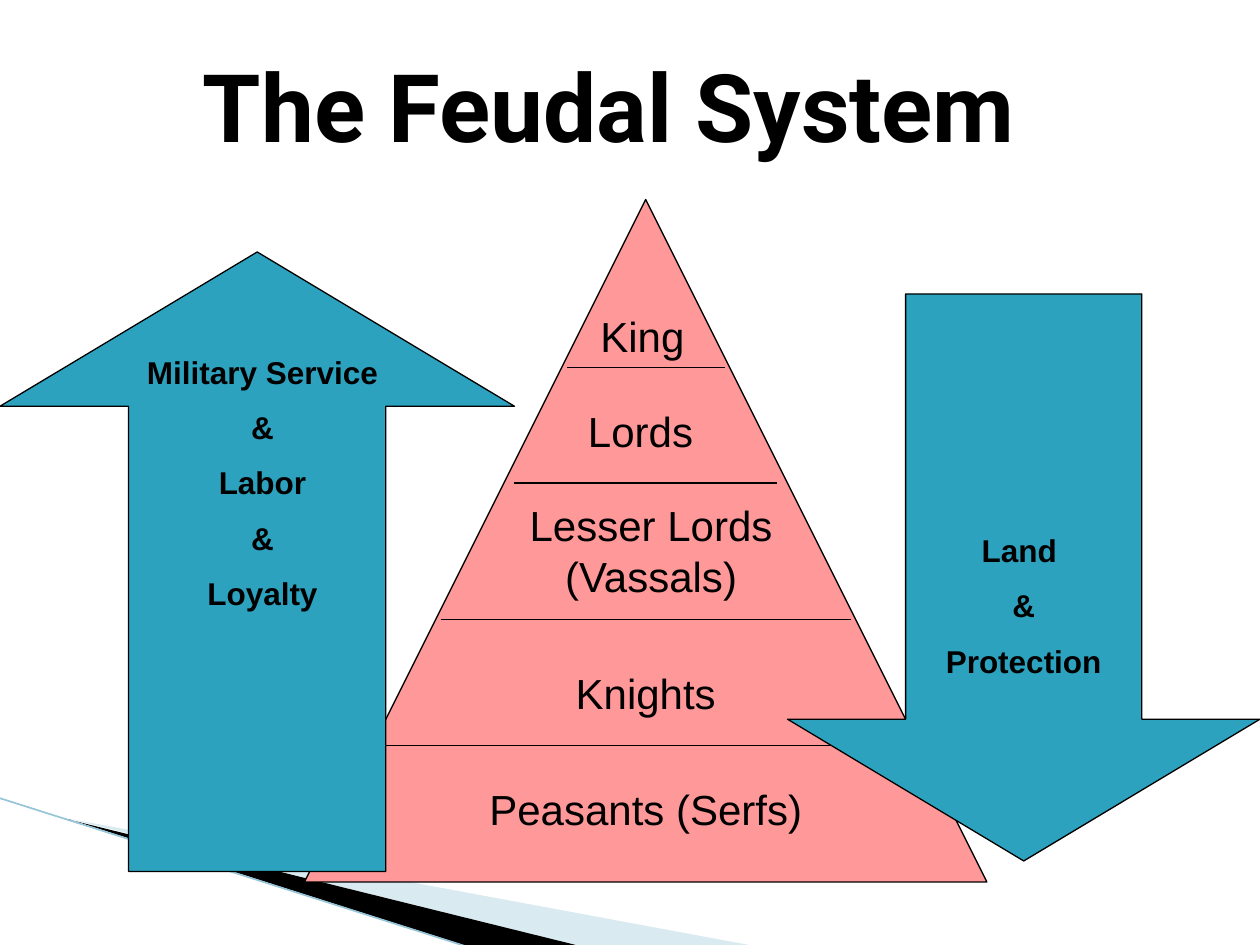
import pptx
import pptx.util
import pptx.dml.color
import pptx.enum.shapes
import pptx.enum.text
import lxml.etree

Pt = pptx.util.Pt
Kind = pptx.enum.shapes.MSO_SHAPE
Align = pptx.enum.text.PP_ALIGN
BLACK, PINK, TEAL = "000000", "FF9999", "2DA2BF"

# Content: boxes are left, top, width, height in points
title = ("The Feudal System", (42, 24, 612, 72))
ranks = [
    ("King", (336, 174, 66, 36), Align.LEFT),
    ("Lords", (318, 228, 96, 36), Align.CENTER),
    ("Lesser Lords (Vassals)", (294, 282, 156, 65), Align.CENTER),
    ("Knights", (240, 378, 258, 36), Align.CENTER),
    ("Peasants (Serfs)", (204, 444, 330, 36), Align.CENTER),
]
middle = 369
rules = [(210, 45), (276, 75), (354, 117), (426, 153)]  # height, half width
flows = [
    (Kind.UP_ARROW, (0, 144, 294, 354), (30, 198, 240, 342),
     ["Military Service", "&", "Labor", "&", "Loyalty"]),
    (Kind.DOWN_ARROW, (450, 168, 270, 324), (498, 300, 174, 142),
     ["Land ", "&", "Protection"]),
]
swoosh = [
    ("A0CBDC", 40, [(39.6, 468.5), (428.5, 540.5), (328.5, 540.5), (39.6, 468)]),
    (BLACK, 100, [(38, 467.5), (329, 540.5), (268, 541), (39, 468)]),
]

deck = pptx.Presentation()
deck.slide_width, deck.slide_height = Pt(720), Pt(540)
slide = deck.slides.add_slide(deck.slide_layouts[6])
shapes = slide.shapes


def tint(code):
    return pptx.dml.color.RGBColor.from_string(code)


def paint(shape, fill, edge=None):
    shape.shadow.inherit = False
    shape.fill.solid()
    shape.fill.fore_color.rgb = tint(fill)
    if edge:
        shape.line.color.rgb = tint(edge)
        shape.line.width = Pt(0.75)
    else:
        shape.line.fill.background()


def block(kind, box, fill):
    shape = shapes.add_shape(kind, *map(Pt, box))
    paint(shape, fill, BLACK)
    return shape


def rule(start, end, color=BLACK, width=0.75):
    line = shapes.add_connector(
        pptx.enum.shapes.MSO_CONNECTOR.STRAIGHT, *map(Pt, start + end))
    line.line.color.rgb = tint(color)
    line.line.width = Pt(width)
    props = line._element.spPr
    lxml.etree.SubElement(props, pptx.oxml.ns.qn("a:effectLst"))


def write(lines, box, size=24, font="Arial", bold=False,
          align=Align.CENTER, gap=0):
    frame = shapes.add_textbox(*map(Pt, box)).text_frame
    frame.word_wrap = True
    for i, text in enumerate(lines):
        para = frame.paragraphs[0] if i == 0 else frame.add_paragraph()
        para.alignment = align
        if i:
            para.space_before = Pt(gap)
        run = para.add_run()
        run.text = text
        run.font.name, run.font.size = font, Pt(size)
        run.font.bold = bold
        run.font.color.rgb = tint(BLACK)


# Corner swoosh
for color, alpha, points in swoosh:
    path = shapes.build_freeform(*points[0], scale=Pt(1))
    path.add_line_segments(points[1:], close=True)
    wedge = path.convert_to_shape()
    paint(wedge, color)
    if alpha < 100:
        node = wedge._element.spPr.find(".//" + pptx.oxml.ns.qn("a:srgbClr"))
        lxml.etree.SubElement(
            node, pptx.oxml.ns.qn("a:alpha"), val=str(alpha * 1000))
rule((-0.5, 456), (267, 541), "97C5D8", 0.95)

# Title
write([title[0]], title[1], size=54, font="Roboto", bold=True)

# Pyramid of ranks
block(Kind.ISOSCELES_TRIANGLE, (174, 114, 390, 390), PINK)
for y, half in rules:
    rule((middle - half, y), (middle + half, y))
for text, box, align in ranks:
    write([text], box, align=align)

# Arrows for what each side gives
for kind, box, area, lines in flows:
    arrow = block(kind, box, TEAL)
    arrow.adjustments[0], arrow.adjustments[1] = 0.5, 0.3
    write(lines, area, size=18, bold=True, gap=10)

deck.save("out.pptx")
